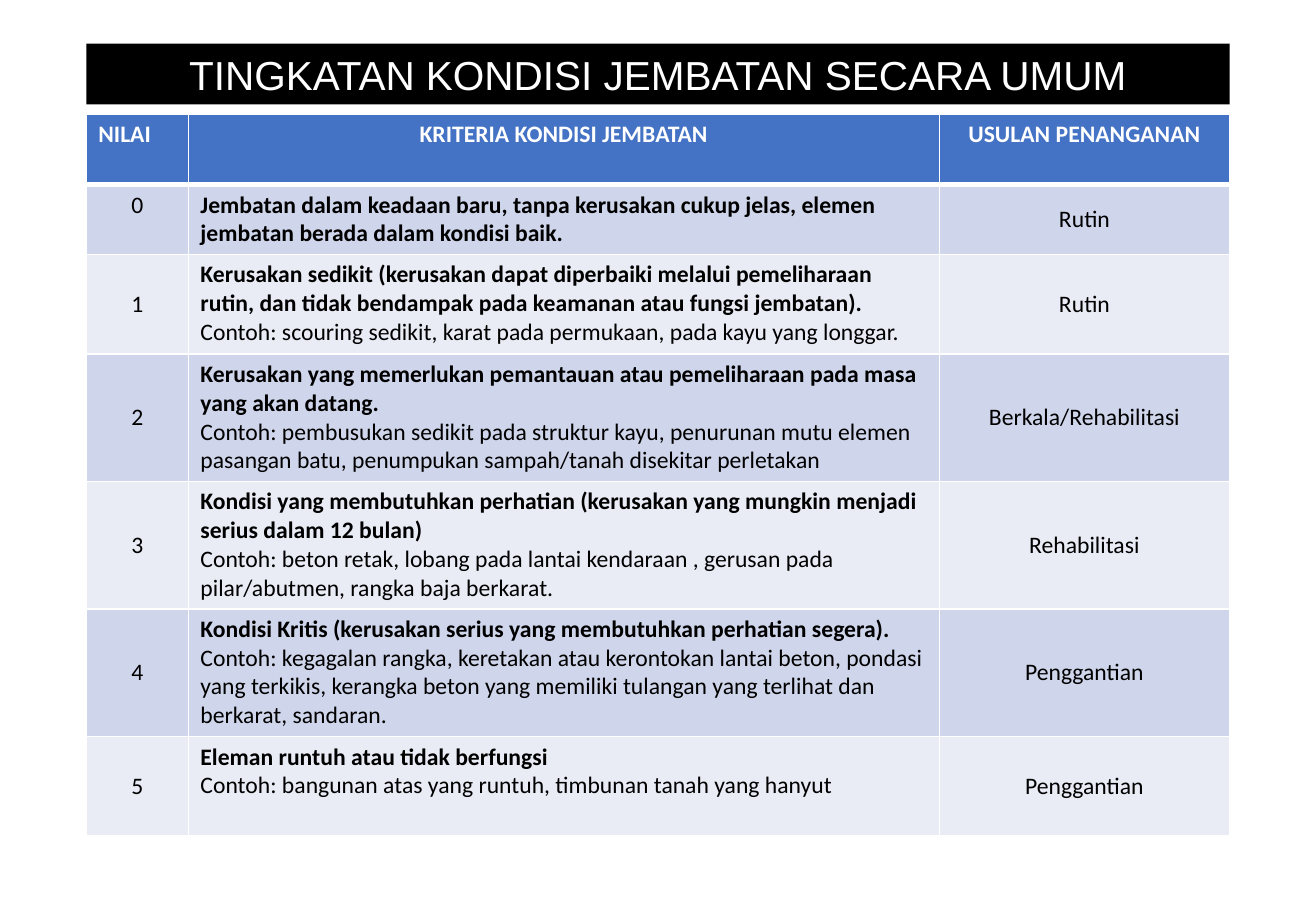
from lxml import etree
from pptx import Presentation
from pptx.dml.color import RGBColor
from pptx.enum import shapes, text
from pptx.oxml import ns
from pptx.util import Inches, Pt

COLORS = {
    "white": "FFFFFF",
    "black": "000000",
    "header": "4472C4",
    "odd_row": "CFD5EA",
    "even_row": "E9EBF5",
}
LEFT, WIDTH = 0.71, 9.41
COLUMN_WIDTHS = [0.84, 6.18, 2.39]
ROW_HEIGHTS = [0.58, 0.57, 0.82, 1.05, 1.05, 1.05, 0.82]
HEADINGS = ["NILAI", "KRITERIA KONDISI JEMBATAN", "USULAN PENANGANAN"]
# Criterion, example, proposed treatment; the grade is the position in the list.
CONDITIONS = [
    ("Jembatan dalam keadaan baru, tanpa kerusakan cukup jelas, elemen jembatan berada dalam kondisi baik.",
     None, "Rutin"),
    ("Kerusakan sedikit (kerusakan dapat diperbaiki melalui pemeliharaan rutin, "
     "dan tidak bendampak pada keamanan atau fungsi jembatan).",
     "Contoh: scouring sedikit, karat pada permukaan, pada kayu yang longgar.", "Rutin"),
    ("Kerusakan yang memerlukan pemantauan atau pemeliharaan pada masa yang akan datang.",
     "Contoh: pembusukan sedikit pada struktur kayu, penurunan mutu elemen pasangan batu, "
     "penumpukan sampah/tanah disekitar perletakan", "Berkala/Rehabilitasi"),
    ("Kondisi yang membutuhkan perhatian (kerusakan yang mungkin menjadi serius dalam 12 bulan)",
     "Contoh: beton retak, lobang pada lantai kendaraan , gerusan pada pilar/abutmen, "
     "rangka baja berkarat.", "Rehabilitasi"),
    ("Kondisi Kritis (kerusakan serius yang membutuhkan perhatian segera).",
     "Contoh: kegagalan rangka, keretakan atau kerontokan lantai beton, pondasi yang terkikis, "
     "kerangka beton yang memiliki tulangan yang terlihat dan berkarat, sandaran.", "Penggantian"),
    ("Eleman runtuh atau tidak berfungsi",
     "Contoh: bangunan atas yang runtuh, timbunan tanah yang hanyut", "Penggantian"),
]


def rgb(name):
    return RGBColor.from_string(COLORS[name])


def write(paragraph, words, font="Calibri", size=14, color="black", bold=False, centered=False):
    paragraph.alignment = text.PP_ALIGN.CENTER if centered else text.PP_ALIGN.LEFT
    run = paragraph.add_run()
    run.text = words
    run.font.name = font
    run.font.size = Pt(size)
    run.font.bold = bold
    run.font.color.rgb = rgb(color)


def style_cell(cell, fill, top=1, bottom=1, middle=False):
    """Give a cell white borders (widths in points), a fill and an anchor."""
    properties = cell._tc.get_or_add_tcPr()
    for side, width in {"L": 1, "R": 1, "T": top, "B": bottom}.items():
        line = etree.SubElement(properties, ns.qn(f"a:ln{side}"), w=str(Pt(width)))
        solid = etree.SubElement(line, ns.qn("a:solidFill"))
        etree.SubElement(solid, ns.qn("a:srgbClr"), val=COLORS["white"])
    cell.fill.solid()
    cell.fill.fore_color.rgb = rgb(fill)
    cell.vertical_anchor = text.MSO_ANCHOR.MIDDLE if middle else text.MSO_ANCHOR.TOP


def add_title(slide, left, top, width, height):
    shape = slide.shapes.add_shape(
        shapes.MSO_SHAPE.RECTANGLE, Inches(left), Inches(top), Inches(width), Inches(height))
    shape.shadow.inherit = False
    shape.fill.solid()
    shape.fill.fore_color.rgb = rgb("black")
    shape.line.fill.background()
    frame = shape.text_frame
    frame.word_wrap = True
    frame.vertical_anchor = text.MSO_ANCHOR.TOP
    write(frame.paragraphs[0], "TINGKATAN KONDISI JEMBATAN SECARA UMUM",
          font="Arial", size=24, color="white", centered=True)


def add_condition_table(slide, left, top, width, height):
    table = slide.shapes.add_table(
        len(ROW_HEIGHTS), len(COLUMN_WIDTHS),
        Inches(left), Inches(top), Inches(width), Inches(height)).table
    for column, column_width in zip(table.columns, COLUMN_WIDTHS):
        column.width = Inches(column_width)
    for row, row_height in zip(table.rows, ROW_HEIGHTS):
        row.height = Inches(row_height)

    for index, heading in enumerate(HEADINGS):
        cell = table.cell(0, index)
        style_cell(cell, "header", bottom=3)
        write(cell.text_frame.paragraphs[0], heading, color="white", bold=True, centered=index > 0)

    for grade, (criterion, example, treatment) in enumerate(CONDITIONS):
        grade_cell, criterion_cell, treatment_cell = table.rows[grade + 1].cells
        fill = "even_row" if grade % 2 else "odd_row"
        top_border = 1 if grade else 3
        style_cell(grade_cell, fill, top=top_border, middle=grade > 0)
        style_cell(criterion_cell, fill, top=top_border, middle=grade == 2)
        style_cell(treatment_cell, fill, top=top_border, middle=True)
        write(grade_cell.text_frame.paragraphs[0], str(grade), centered=True)
        write(criterion_cell.text_frame.paragraphs[0], criterion, bold=True)
        if example:
            write(criterion_cell.text_frame.add_paragraph(), example)
        write(treatment_cell.text_frame.paragraphs[0], treatment, centered=True)


def main():
    presentation = Presentation()
    presentation.slide_width = Inches(10.83)
    presentation.slide_height = Inches(7.5)
    slide = presentation.slides.add_slide(presentation.slide_layouts[6])
    add_condition_table(slide, LEFT, 0.94, WIDTH, sum(ROW_HEIGHTS))
    add_title(slide, LEFT, 0.36, WIDTH, 0.5)
    presentation.save("out.pptx")


if __name__ == "__main__":
    main()
